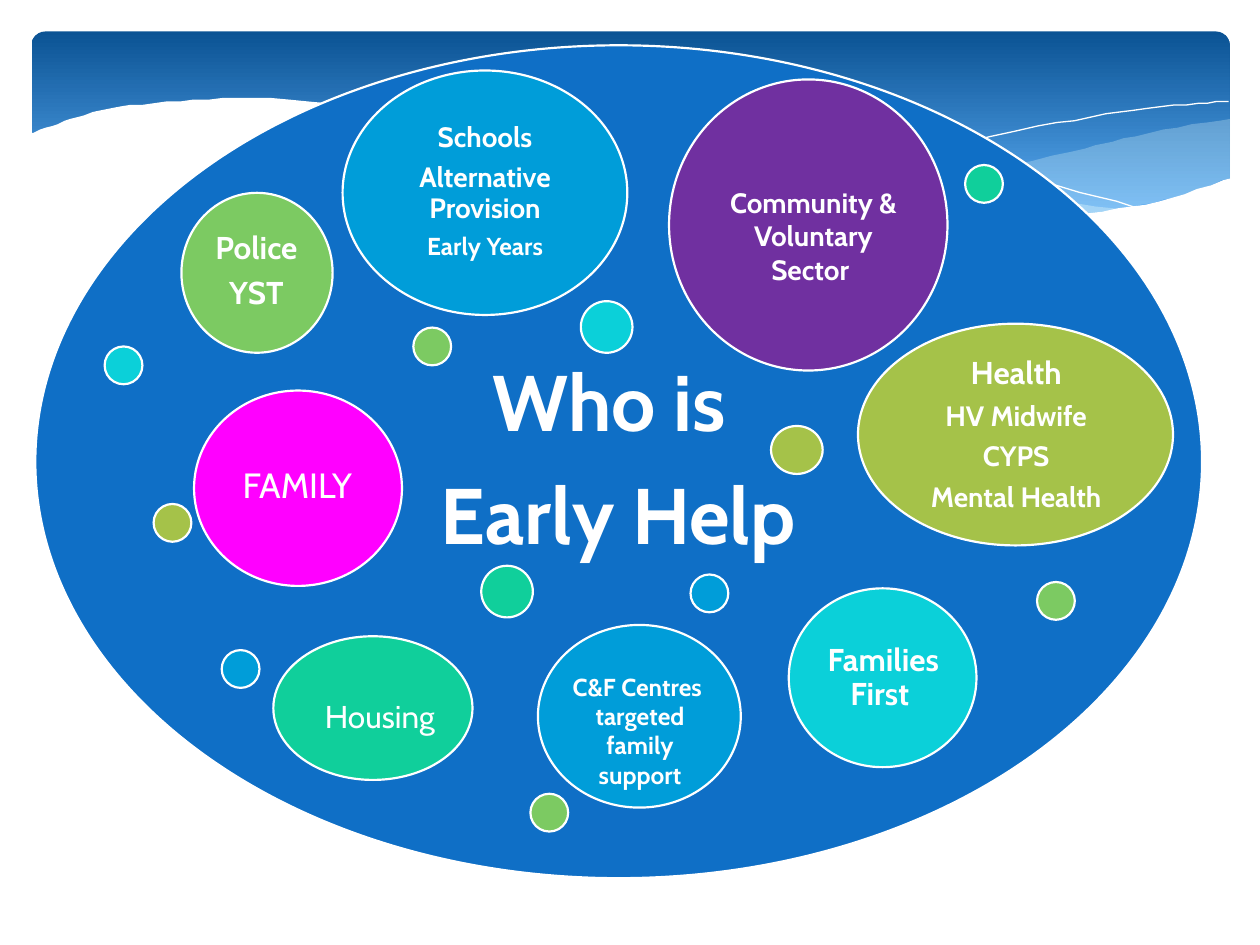
"""Build the "Who is Early Help" bubble slide."""
import pptx
import pptx.dml.color
import pptx.enum.shapes
import pptx.enum.text
import pptx.oxml.ns
import pptx.util
from lxml import etree

Pt = pptx.util.Pt
RGBColor = pptx.dml.color.RGBColor
MSO_SHAPE = pptx.enum.shapes.MSO_SHAPE
MSO_ANCHOR = pptx.enum.text.MSO_ANCHOR
PP_ALIGN = pptx.enum.text.PP_ALIGN

FONT = "Cabin"
WHITE = RGBColor(0xFF, 0xFF, 0xFF)
NAVY = RGBColor(0x0B, 0x53, 0x94)
SKY = RGBColor(0x59, 0xAA, 0xF2)
PALE = RGBColor(0xDB, 0xF5, 0xF9)
ROYAL = RGBColor(0x0F, 0x6F, 0xC6)
BLUE = RGBColor(0x00, 0x9D, 0xD9)
CYAN = RGBColor(0x0B, 0xD0, 0xD9)
TEAL = RGBColor(0x10, 0xCF, 0x9B)
GREEN = RGBColor(0x7C, 0xCA, 0x62)
OLIVE = RGBColor(0xA5, 0xC2, 0x49)
PURPLE = RGBColor(0x70, 0x30, 0xA0)
MAGENTA = RGBColor(0xFF, 0x00, 0xFF)

RIGHT_WAVE_TOP = [(702.7, 67.7), (673, 72.7), (641.5, 79.2), (620, 85), (579.6, 94.3),
                  (542, 103), (508, 109.4), (476, 115.2)]
RIGHT_WAVE_BOTTOM = [(476, 115.2), (507.6, 118.8), (545, 122.4), (586, 123.8),
                     (621.4, 122.4), (651.6, 117.4), (678.2, 110.9), (702.7, 101.5)]
MID_WAVE_TOP = [(643, 120.2), (602.6, 114.5), (558, 107.3), (508.3, 96.5), (452.9, 83.5),
                (409.7, 73.4), (370, 66.2), (334.8, 61.9), (302.4, 59), (273.6, 57.6),
                (247.7, 57.6), (225.4, 59), (205.9, 61.9)]
MID_WAVE_BOTTOM = [(205.9, 61.9), (246.2, 67.7), (290.9, 76.3), (323.3, 83.5),
                   (381.6, 97.2), (432.7, 108), (478.8, 115.9), (519.8, 121),
                   (556.6, 123.8), (589, 124.6), (617, 123.1), (643, 120.2)]
FALLING_LINE = [(222.5, 64.8), (241.2, 61.2), (269.3, 59), (299.5, 58.3), (337.7, 59.8),
                (383.8, 63.4), (437.8, 70.6), (500.4, 82.1), (572.4, 97.9), (653, 119.5)]
RISING_LINE = [(441.4, 108.7), (470.2, 101.5), (518.4, 89.3), (580.3, 74.9),
               (623.5, 67), (655.2, 61.9), (684.7, 59), (702, 57.6)]
WHITE_EDGE = [(703.4, 101.5), (676.8, 110.9), (647.3, 118.1), (612, 122.4), (571, 123.1),
              (522.7, 120.2), (466.6, 112.3), (399.6, 100.1), (321.8, 82.1),
              (262.8, 69.1), (210.2, 61.2), (165.6, 56.9), (127.4, 56.2), (95, 58.3),
              (68.4, 61.2), (48.2, 65.5), (33.1, 70.6), (20.9, 74.9), (16.6, 77)]
WHITE_BASE = [(16.6, 161.3), (703.4, 161.3)]

BUBBLES = [
    ((382.3, 45.4, 159.1, 166.3), PURPLE),
    ((195.8, 40.3, 162.7, 139.7), BLUE),
    ((156.2, 363.6, 113.8, 82.1), TEAL),
    ((103.7, 110.2, 86.4, 91.4), GREEN),
    ((110.9, 223.2, 118.8, 111.6), MAGENTA),
    ((490.3, 185, 180, 126.7), OLIVE),
    ((307.4, 357.1, 115.9, 104.4), BLUE),
    ((450.7, 336.2, 107.3, 102.2), CYAN),
    ((275, 323.3, 29.5, 29.5), TEAL),
    ((331.9, 172.1, 29.5, 29.5), CYAN),
    ((440.6, 243.4, 29.5, 27.4), OLIVE),
]
DOT_SIZE = 21.6
DOTS = [(394.6, 328.3, BLUE), (236.2, 187.2, GREEN), (87.8, 288, OLIVE),
        (126.7, 371.5, BLUE), (59.8, 198, CYAN), (592.6, 332.6, GREEN),
        (551.5, 94.3, TEAL), (303.1, 453.6, GREEN)]

CENTRED_LABELS = [
    ((219.6, 60.5, 115.2, 98.6),
     [("Schools", 16), ("Alternative Provision", 16), ("Early Years", 14)], True),
    ((115.9, 123.1, 61.2, 64.8), [("Police", 18), ("YST", 18)], True),
    ((128.2, 239, 83.5, 78.5), [("FAMILY", 20)], False),
    ((517, 203.8, 127.4, 90),
     [("Health", 18), ("HV Midwife", 16), ("CYPS", 16), ("Mental Health", 16)], True),
    ((466.6, 351.4, 76.3, 72.7), [("Families First ", 18)], True),
]
PLAIN_LABELS = [
    ((405.4, 102.3, 118.8, 65.5),
     [("Community & Voluntary", 16), ("Sector ", 16)], True, PP_ALIGN.CENTER),
    ((178.6, 394.6, 85, 28.8), [("Housing", 18)], False, PP_ALIGN.LEFT),
    ((313.9, 380.2, 103.7, 75),
     [("C&F Centres ", 14), ("targeted family", 14), ("support", 14)], True,
     PP_ALIGN.CENTER),
]


def smooth(knots, steps=4):
    """Return points of a Catmull-Rom curve through the knots."""
    ends = [knots[0], *knots, knots[-1]]
    points = [knots[0]]
    for a, b, c, d in zip(ends, ends[1:], ends[2:], ends[3:]):
        for t in (i / steps for i in range(1, steps + 1)):
            points.append(tuple(
                0.5 * (2 * q + (r - p) * t + (2 * p - 5 * q + 4 * r - s) * t ** 2
                       + (3 * q - p - 3 * r + s) * t ** 3)
                for p, q, r, s in zip(a, b, c, d)))
    return points


def add_outline(slide, points, fill=None, opacity=100):
    """Draw a filled area, or a white hairline when there is no fill."""
    builder = slide.shapes.build_freeform(*points[0], scale=float(Pt(1)))
    builder.add_line_segments(points[1:], close=fill is not None)
    sp = builder.convert_to_shape()
    sp.shadow.inherit = False
    if fill is None:
        sp.fill.background()
        sp.line.color.rgb = WHITE
        sp.line.width = Pt(0)
        return
    sp.fill.solid()
    sp.fill.fore_color.rgb = fill
    sp.line.fill.background()
    if opacity < 100:
        clr = sp.fill._xPr.find(".//" + pptx.oxml.ns.qn("a:srgbClr"))
        etree.SubElement(clr, pptx.oxml.ns.qn("a:alpha"), val=str(opacity * 1000))


def add_banner(slide):
    """Draw the gradient header and its waves."""
    sp = slide.shapes.add_shape(MSO_SHAPE.ROUNDED_RECTANGLE,
                                Pt(18), Pt(18), Pt(684.7), Pt(112.3))
    sp.adjustments[0] = 0.07
    sp.shadow.inherit = False
    sp.line.fill.background()
    sp.fill.gradient()
    sp.fill.gradient_angle = 270
    for stop, color, position in zip(sp.fill.gradient_stops, (NAVY, SKY), (0, 0.9)):
        stop.color.rgb = color
        stop.position = position
    add_outline(slide, smooth(RIGHT_WAVE_TOP) + smooth(RIGHT_WAVE_BOTTOM), PALE, 29)
    add_outline(slide, smooth(MID_WAVE_TOP) + smooth(MID_WAVE_BOTTOM), PALE, 40)
    add_outline(slide, smooth(FALLING_LINE))
    add_outline(slide, smooth(RISING_LINE))
    add_outline(slide, smooth(WHITE_EDGE) + WHITE_BASE, WHITE)


def add_bubble(slide, box, color):
    """Draw a white-edged ellipse."""
    sp = slide.shapes.add_shape(MSO_SHAPE.OVAL, *map(Pt, box))
    sp.shadow.inherit = False
    sp.fill.solid()
    sp.fill.fore_color.rgb = color
    sp.line.color.rgb = WHITE
    sp.line.width = Pt(1.25)


def add_label(slide, box, lines, bold, align=PP_ALIGN.CENTER, inset=None):
    """Write white lines; an inset centres them vertically with spacing."""
    tf = slide.shapes.add_textbox(*map(Pt, box)).text_frame
    tf.word_wrap = True
    if inset is not None:
        tf.vertical_anchor = MSO_ANCHOR.MIDDLE
        tf.margin_left = tf.margin_right = tf.margin_top = tf.margin_bottom = Pt(inset)
    for i, (text, size) in enumerate(lines):
        p = tf.add_paragraph() if i else tf.paragraphs[0]
        p.text = text
        p.alignment = align
        if inset is not None:
            p.line_spacing = 0.9
            p.space_after = Pt(round(size * 0.35, 1))
        p.font.name = FONT
        p.font.size = Pt(size)
        p.font.bold = bold
        p.font.color.rgb = WHITE


def main():
    """Build and save the slide."""
    prs = pptx.Presentation()
    prs.slide_width, prs.slide_height = Pt(720), Pt(540)
    slide = prs.slides.add_slide(prs.slide_layouts[6])
    add_banner(slide)
    add_bubble(slide, (20.2, 25.9, 666.7, 475.9), ROYAL)
    add_label(slide, (117.4, 95.8, 471.6, 337),
              [("Who is ", 45), ("Early Help", 45)], True, inset=13.7)
    for box, color in BUBBLES:
        add_bubble(slide, box, color)
    for left, top, color in DOTS:
        add_bubble(slide, (left, top, DOT_SIZE, DOT_SIZE), color)
    for box, lines, bold in CENTRED_LABELS:
        add_label(slide, box, lines, bold, inset=5)
    for box, lines, bold, align in PLAIN_LABELS:
        add_label(slide, box, lines, bold, align)
    prs.save("out.pptx")


if __name__ == "__main__":
    main()
